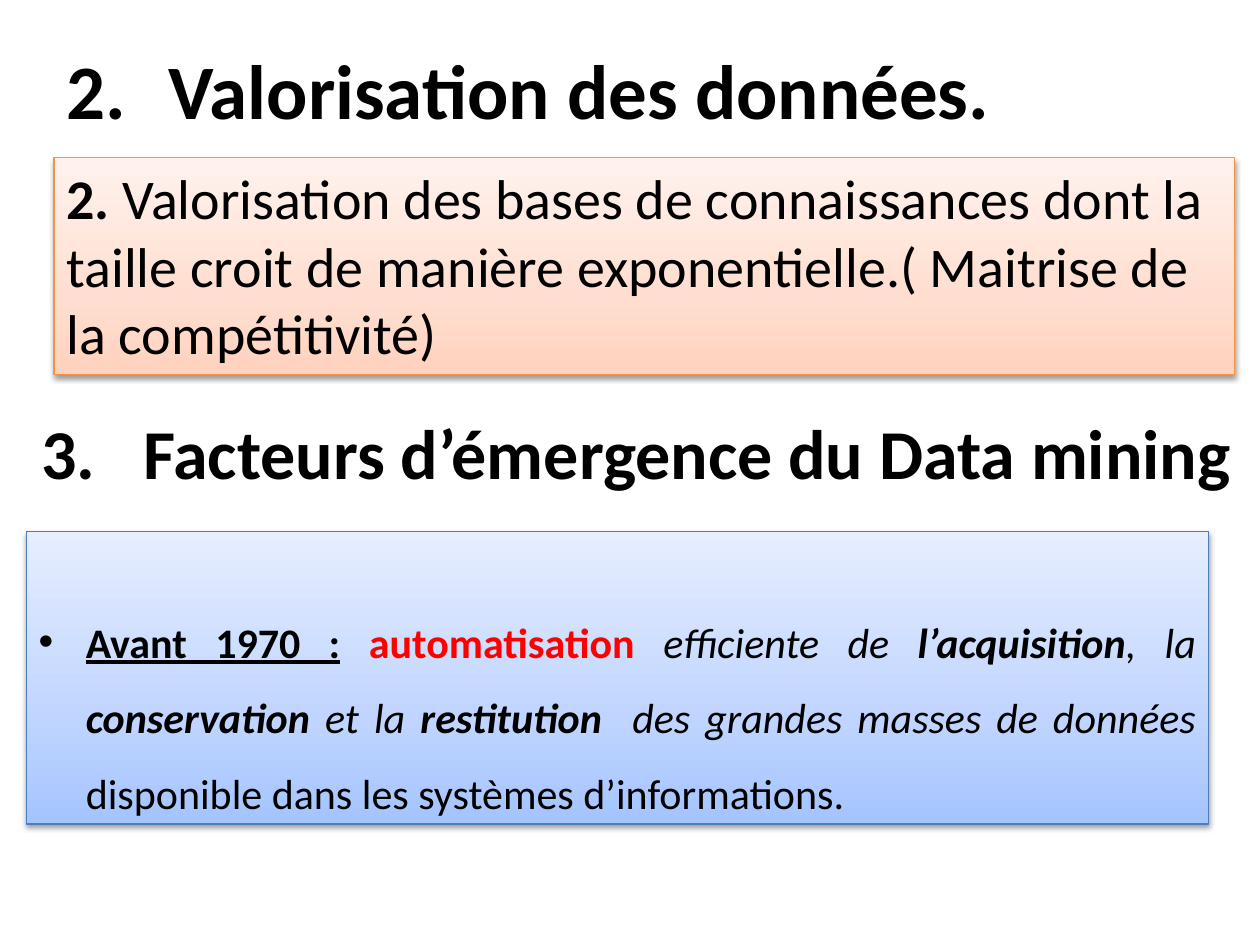
from copy import deepcopy

from lxml.etree import SubElement
from pptx import Presentation
from pptx.dml.color import RGBColor
from pptx.enum.shapes import MSO_SHAPE
from pptx.enum.text import MSO_ANCHOR, PP_ALIGN
from pptx.oxml.ns import qn
from pptx.util import Cm, Pt

BOLD = {"bold": True}
ITALIC = {"italic": True}
BOLD_ITALIC = {**BOLD, **ITALIC}
ORANGE = {"stops": ["FFD2BD", "FFDED0", "FFF2ED"], "line": "F69240"}
BLUE = {"stops": ["A4C4FF", "BFD4FF", "E6EEFF"], "line": "4B7EBC"}


def color(value):
    return RGBColor.from_string(value)


class SlideBuilder:
    font_name = "Calibri"
    text_color = "000000"
    stop_positions = (0, 0.35, 1)

    def __init__(self, page):
        self.page = page

    def add_spans(self, para, spans, size):
        """Add (text, format) spans to a paragraph."""
        for text, extra in spans:
            span = para.add_run()
            span.text = text
            look = {"name": self.font_name, "size": Pt(size), **extra}
            span.font.color.rgb = color(look.pop("color", self.text_color))
            for name, value in look.items():
                setattr(span.font, name, value)

    def marker(self, para, indent, tag, **attributes):
        """Give a paragraph a hanging indent and a bullet or number."""
        properties = para._p.get_or_add_pPr()
        properties.set("marL", str(Cm(indent)))
        properties.set("indent", str(-Cm(indent)))
        SubElement(properties, qn("a:buFont"), typeface="Arial" if tag == "a:buChar" else "+mj-lt")
        SubElement(properties, qn(tag), **attributes)

    def heading(self, place, number, text, size):
        box = self.page.shapes.add_textbox(*map(Cm, place))
        box.text_frame.word_wrap = True
        para = box.text_frame.paragraphs[0]
        self.marker(para, 2.06, "a:buAutoNum", type="arabicPeriod", startAt=str(number))
        self.add_spans(para, [(text, BOLD)], size)

    def shadow(self, box):
        box.shadow.inherit = False
        effects = box._element.spPr.find(qn("a:effectLst"))
        outer = SubElement(effects, qn("a:outerShdw"), blurRad=str(Pt(3.1)),
                           dist=str(Pt(1.6)), dir="5400000", rotWithShape="0")
        shade = SubElement(outer, qn("a:srgbClr"), val="000000")
        SubElement(shade, qn("a:alpha"), val="38000")

    def panel(self, place, style, spans, size, anchor=MSO_ANCHOR.TOP, align=PP_ALIGN.LEFT):
        """Add a shaded rectangle and return its paragraph."""
        box = self.page.shapes.add_shape(MSO_SHAPE.RECTANGLE, *map(Cm, place))
        box.fill.gradient()
        box.fill.gradient_angle = 90
        stop_list = box._element.spPr.find(f".//{qn('a:gsLst')}")
        stop_list.append(deepcopy(stop_list[0]))
        for stop, position, value in zip(box.fill.gradient_stops, self.stop_positions, style["stops"]):
            stop.position = position
            stop.color.rgb = color(value)
        box.line.color.rgb = color(style["line"])
        box.line.width = Pt(0.75)
        self.shadow(box)
        frame = box.text_frame
        frame.word_wrap = True
        frame.vertical_anchor = anchor
        para = frame.paragraphs[0]
        para.alignment = align
        self.add_spans(para, spans, size)
        return para


def main():
    deck = Presentation()
    deck.slide_width, deck.slide_height = Cm(25.4), Cm(19.05)
    slide = SlideBuilder(deck.slides.add_slide(deck.slide_layouts[6]))

    slide.heading((1.09, 0.74, 23.32, 2.13), 2, "Valorisation des données.", 44)
    slide.panel((1.09, 3.18, 23.8, 4.37), ORANGE, [
        ("2. ", BOLD),
        ("Valorisation des bases de connaissances dont la taille croit de manière "
         "exponentielle.( Maitrise de la compétitivité)", {}),
    ], 32)

    slide.heading((0.58, 8.13, 24.82, 1.96), 3, "Facteurs d’émergence du Data mining", 40)
    era = slide.panel((0.53, 10.72, 23.83, 5.89), BLUE, [
        ("Avant 1970 :", {**BOLD, "underline": True}),
        (" ", BOLD),
        ("automatisation ", {**BOLD, "color": "FF0000"}),
        ("efficiente de ", ITALIC),
        ("l’acquisition", BOLD_ITALIC),
        (", la ", ITALIC),
        ("conservation", BOLD_ITALIC),
        (" et la", ITALIC),
        (" restitution  ", BOLD_ITALIC),
        ("des grandes masses de données ", ITALIC),
        ("disponible dans les systèmes d’informations.", {}),
    ], 24, MSO_ANCHOR.BOTTOM, PP_ALIGN.JUSTIFY)
    slide.marker(era, 0.95, "a:buChar", char="•")
    era.line_spacing = 1.5

    deck.save("out.pptx")


if __name__ == "__main__":
    main()
